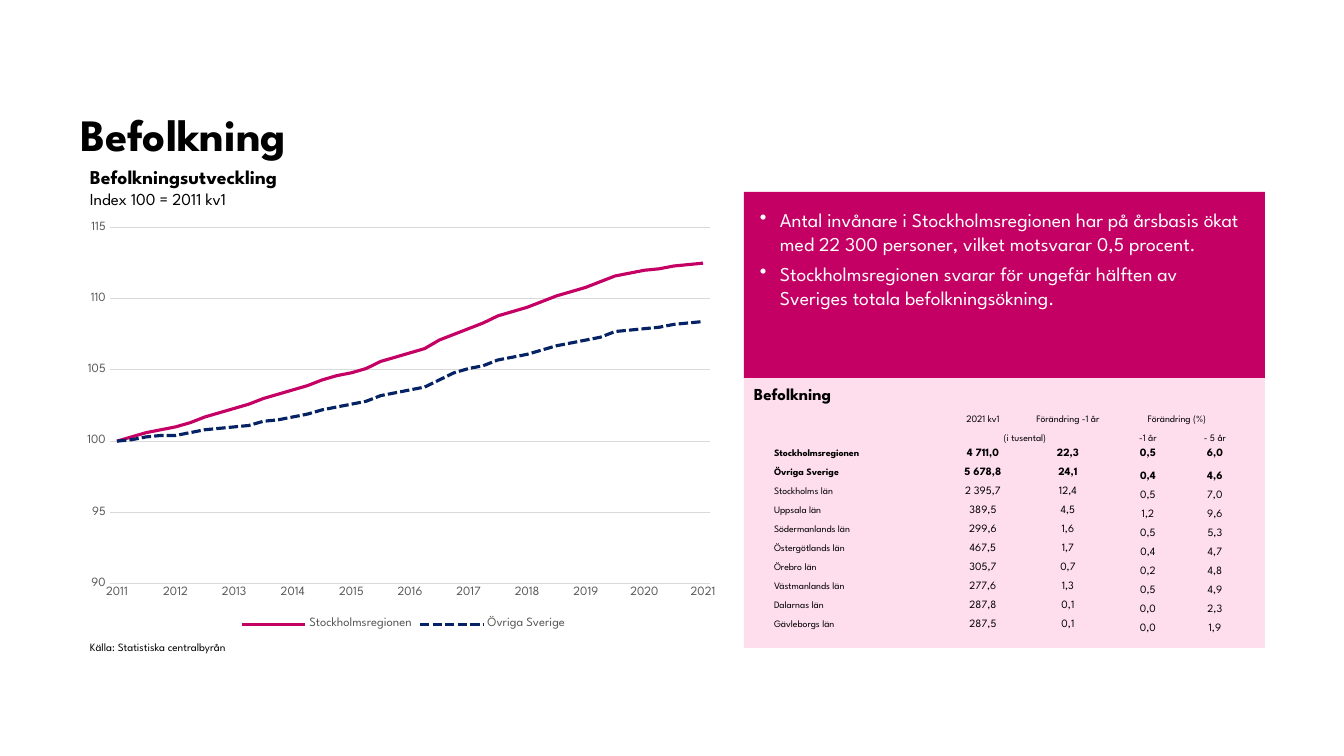
from lxml import etree
from pptx import Presentation
from pptx import util as u
from pptx.chart.data import CategoryChartData
from pptx.dml.color import RGBColor
from pptx.enum import chart as charts, dml, shapes, text
from pptx.oxml import parse_xml
from pptx.oxml.ns import nsdecls, qn

SCALE = 9071.43
FONT = "League Spartan"
NO_STYLE = "{2D5ABB26-0587-4C30-8999-92F81FD0307C}"
COLORS = {"black": "000000", "white": "FFFFFF", "magenta": "C40064", "pink": "FEDEED",
          "navy": "052364", "grey": "595959", "grid": "D9D9D9"}

BULLETS = [
    "Antal invånare i Stockholmsregionen har på årsbasis ökat med 22 300 personer, "
    "vilket motsvarar 0,5 procent.",
    "Stockholmsregionen svarar för ungefär hälften av Sveriges totala befolkningsökning.",
]
HEADER = [["", "2021 kv1", "Förändring -1 år", "Förändring (%)", ""],
          ["", "(i tusental)", "", "-1 år", "- 5 år"]]
REGIONS = [
    ["Stockholmsregionen", "4 711,0", "22,3", "0,5", "6,0"],
    ["Övriga Sverige", "5 678,8", "24,1", "0,4", "4,6"],
    ["Stockholms län", "2 395,7", "12,4", "0,5", "7,0"],
    ["Uppsala län", "389,5", "4,5", "1,2", "9,6"],
    ["Södermanlands län", "299,6", "1,6", "0,5", "5,3"],
    ["Östergötlands län", "467,5", "1,7", "0,4", "4,7"],
    ["Örebro län", "305,7", "0,7", "0,2", "4,8"],
    ["Västmanlands län", "277,6", "1,3", "0,5", "4,9"],
    ["Dalarnas län", "287,8", "0,1", "0,0", "2,3"],
    ["Gävleborgs län", "287,5", "0,1", "0,0", "1,9"],
]
QUARTERS = ["" if quarter % 4 else str(2011 + quarter // 4) for quarter in range(41)]
SERIES = [
    ("Stockholmsregionen", "magenta", None,
     [100, 100.3, 100.6, 100.8, 101, 101.3, 101.7, 102, 102.3, 102.6, 103, 103.3, 103.6, 103.9,
      104.3, 104.6, 104.8, 105.1, 105.6, 105.9, 106.2, 106.5, 107.1, 107.5, 107.9, 108.3, 108.8,
      109.1, 109.4, 109.8, 110.2, 110.5, 110.8, 111.2, 111.6, 111.8, 112, 112.1, 112.3, 112.4,
      112.5]),
    ("Övriga Sverige", "navy", dml.MSO_LINE.SQUARE_DOT,
     [100, 100.1, 100.3, 100.4, 100.4, 100.6, 100.8, 100.9, 101, 101.1, 101.4, 101.5, 101.7, 101.9,
      102.2, 102.4, 102.6, 102.8, 103.2, 103.4, 103.6, 103.8, 104.3, 104.8, 105.1, 105.3, 105.7,
      105.9, 106.1, 106.4, 106.7, 106.9, 107.1, 107.3, 107.7, 107.8, 107.9, 108, 108.2, 108.3,
      108.4]),
]


def px(value):
    """Turn pixels into EMU."""
    return u.Emu(round(value * SCALE))


def color(name):
    """Look up a palette colour."""
    return RGBColor.from_string(COLORS[name])


class SlideBuilder:
    """Holds the style and the current slide, and adds elements to it."""

    def __init__(self, presentation):
        """Add a blank slide."""
        self.slide = presentation.slides.add_slide(presentation.slide_layouts[6])

    def style(self, font, size, name="black", bold=False):
        """Set size, colour and weight of a font."""
        font.name, font.size, font.bold = FONT, u.Pt(size), bold
        font.color.rgb = color(name)

    def label(self, box, content, sizes, bold=(True,), wrap=False, margins=None, anchor=None):
        """Add a text box with one size and weight per run."""
        frame = self.slide.shapes.add_textbox(*map(px, box)).text_frame
        frame.word_wrap = wrap
        if margins is not None:
            frame.margin_left = frame.margin_right = px(margins)
            frame.margin_top = frame.margin_bottom = px(margins)
        if anchor is not None:
            frame.vertical_anchor = anchor
        frame.text = content
        for run, size, weight in zip(frame.paragraphs[0].runs, sizes, bold):
            self.style(run.font, size, bold=weight)

    def panel(self, box, fill):
        """Add a plain filled rectangle."""
        shape = self.slide.shapes.add_shape(shapes.MSO_SHAPE.RECTANGLE, *map(px, box))
        shape.shadow.inherit = False
        shape.fill.solid()
        shape.fill.fore_color.rgb = color(fill)
        shape.line.fill.background()
        return shape

    def bullet_panel(self, box, fill, items):
        """Add a filled rectangle with bulleted paragraphs."""
        frame = self.panel(box, fill).text_frame
        frame.word_wrap = True
        frame.vertical_anchor = text.MSO_ANCHOR.TOP
        frame.margin_left = frame.margin_right = px(16)
        frame.margin_top = frame.margin_bottom = px(16)
        frame.text = "\n".join(items)
        for index, paragraph in enumerate(frame.paragraphs):
            paragraph.alignment = text.PP_ALIGN.LEFT
            paragraph.space_before = u.Pt(5 if index else 0)
            properties = paragraph._p.get_or_add_pPr()
            properties.set("marL", str(px(20)))
            properties.set("indent", str(px(-20)))
            etree.SubElement(properties, qn("a:buChar"), char="•")
            self.style(paragraph.runs[0].font, 14, "white")

    def cell(self, cell, content, size, bold, anchor, is_name):
        """Fill in one table cell."""
        cell.fill.background()
        cell.margin_left = cell.margin_right = cell.margin_top = px(1)
        cell.margin_bottom = 0
        cell.vertical_anchor = anchor
        paragraph = cell.text_frame.paragraphs[0]
        paragraph.text = content
        paragraph.alignment = text.PP_ALIGN.LEFT if is_name else text.PP_ALIGN.CENTER
        if is_name:
            paragraph._p.get_or_add_pPr().set("marL", str(px(8)))
        for run in paragraph.runs:
            self.style(run.font, size, bold=bold)
        if not content:
            etree.SubElement(paragraph._p, qn("a:endParaRPr"), sz=str(size * 100))

    def table(self, box, widths, heights, rows, merges):
        """Add the population table."""
        table = self.slide.shapes.add_table(len(rows), len(widths), *map(px, box)).table
        table.first_row = table.horz_banding = False
        table._tbl.tblPr.find(qn("a:tableStyleId")).text = NO_STYLE
        for column, width in zip(table.columns, widths):
            column.width = px(width)
        for row, height in zip(table.rows, heights):
            row.height = px(height)
        for r, values in enumerate(rows):
            for c, content in enumerate(values):
                low = r < 2 or (r > 2 and c > 2)
                anchor = text.MSO_ANCHOR.BOTTOM if low else text.MSO_ANCHOR.MIDDLE
                size = 7 if r < 2 or c == 0 else 8
                self.cell(table.cell(r, c), content, size, r in (2, 3), anchor, c == 0)
        for r, first, last in merges:
            table.cell(r, first).merge(table.cell(r, last))

    def line_chart(self, box, categories, series, layout):
        """Add the index chart with its plot area placed by fractions."""
        data = CategoryChartData()
        data.categories = categories
        for name, _, _, values in series:
            data.add_series(name, values)
        chart = self.slide.shapes.add_chart(charts.XL_CHART_TYPE.LINE, *map(px, box), data).chart
        self.style(chart.font, 10)
        chart.has_title = False
        chart.has_legend = True
        chart.legend.position = charts.XL_LEGEND_POSITION.BOTTOM
        chart.legend.include_in_layout = False
        self.style(chart.legend.font, 9, "grey")
        plot = chart.plots[0]
        plot.vary_by_categories = False
        for line, (_, name, dash, _) in zip(plot.series, series):
            line.smooth = False
            line.marker.style = charts.XL_MARKER_STYLE.NONE
            line.format.line.color.rgb = color(name)
            line.format.line.width = u.Pt(2.25)
            if dash:
                line.format.line.dash_style = dash
        for axis in (chart.category_axis, chart.value_axis):
            axis.major_tick_mark = axis.minor_tick_mark = charts.XL_TICK_MARK.NONE
            self.style(axis.tick_labels.font, 9, "grey")
        scale = chart.value_axis
        scale.minimum_scale, scale.maximum_scale, scale.major_unit = 90, 115, 5
        scale.format.line.fill.background()
        for line in (chart.category_axis.format.line, scale.major_gridlines.format.line):
            line.color.rgb = color("grid")
            line.width = u.Pt(0.75)
        area = chart._chartSpace.chart.plotArea
        for old in area.findall(qn("c:layout")):
            area.remove(old)
        places = "".join(f'<c:{key} val="{value}"/>' for key, value in layout.items())
        area.insert(0, parse_xml(
            f'<c:layout {nsdecls("c")}><c:manualLayout><c:layoutTarget val="inner"/>'
            f'<c:xMode val="edge"/><c:yMode val="edge"/>{places}</c:manualLayout></c:layout>'))


def main():
    """Build the slide and save it."""
    presentation = Presentation()
    presentation.slide_width, presentation.slide_height = px(1344), px(756)
    builder = SlideBuilder(presentation)
    builder.label((80, 37, 929, 123), "Befolkning", [32], wrap=True, margins=0,
                  anchor=text.MSO_ANCHOR.BOTTOM)
    builder.label((80, 635, 179, 24), "Källa: Statistiska centralbyrån", [8], [False])
    builder.panel((744, 378, 521, 270), "pink")
    builder.bullet_panel((744, 192, 521, 186), "magenta", BULLETS)
    builder.label((744, 379, 106, 30), "Befolkning", [12])
    builder.label((80, 160, 267, 54), "Befolkningsutveckling\vIndex 100 = 2011 kv1",
                  [14, 12], [True, False], wrap=True)
    builder.table((765, 397, 479, 237), [175, 86, 84, 76, 58], [28] + [19] * 11,
                  HEADER + REGIONS, [(0, 3, 4), (1, 1, 2)])
    builder.line_chart((77, 215, 653, 419), QUARTERS, SERIES,
                       {"x": 0.05, "y": 0.03, "w": 0.92, "h": 0.85})
    presentation.save("out.pptx")


if __name__ == "__main__":
    main()
